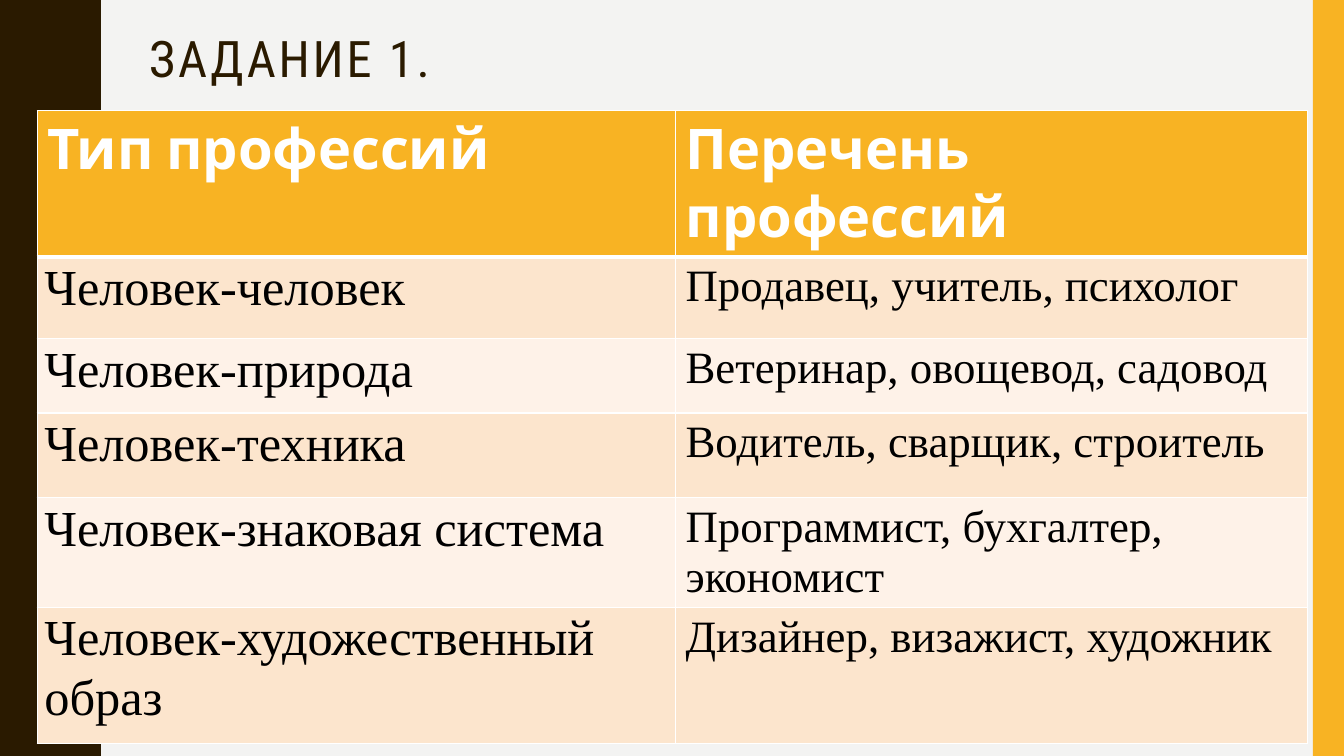
from lxml import etree
from pptx import Presentation
from pptx.dml.color import RGBColor
from pptx.enum.shapes import MSO_SHAPE as Shape
from pptx.enum.text import MSO_ANCHOR as Anchor, MSO_AUTO_SIZE as AutoSize, PP_ALIGN as Align
from pptx.oxml.ns import qn
from pptx.util import Inches, Pt

COLORS = {
    "background": "F3F3F2",
    "dark": "2A1A00",
    "accent": "F8B323",
    "band_dark": "FCE5CD",
    "band_light": "FEF2E8",
    "white": "FFFFFF",
    "black": "000000",
}
SLIDE_WIDTH, SLIDE_HEIGHT = 13.33, 7.5

# Half of one wave of the left edge, as (x, y); the other half mirrors it
HALF_WAVE = [
    (0.78, 0), (0.78, 0.07), (0.79, 0.14), (0.8, 0.2), (0.81, 0.25),
    (0.83, 0.29), (0.85, 0.33), (0.87, 0.38), (0.89, 0.42), (0.91, 0.46),
    (0.93, 0.5), (0.95, 0.55), (0.96, 0.61), (0.97, 0.68), (0.97, 0.75),
]
WAVE_HEIGHT, WAVE_COUNT = 1.5, 5

HEADERS = ["Тип профессий", "Перечень профессий"]
PROFESSIONS = [
    ("Человек-человек", "Продавец, учитель, психолог"),
    ("Человек-природа", "Ветеринар, овощевод, садовод"),
    ("Человек-техника", "Водитель, сварщик, строитель"),
    ("Человек-знаковая система", "Программист, бухгалтер, экономист"),
    ("Человек-художественный образ", "Дизайнер, визажист, художник"),
]
COLUMN_WIDTHS = [6.33, 6.27]
ROW_HEIGHTS = [0.82, 0.81, 0.74, 0.84, 0.76, 1.35]


def color(name):
    return RGBColor.from_string(COLORS[name])


class SlideBuilder:
    def __init__(self, presentation):
        self.slide = presentation.slides.add_slide(presentation.slide_layouts[5])
        self.shapes = self.slide.shapes
        self.paint(self.slide.background, "background")

    def paint(self, item, fill):
        item.fill.solid()
        item.fill.fore_color.rgb = color(fill)

    def finish(self, shape, fill):
        self.paint(shape, fill)
        shape.line.fill.background()
        shape.shadow.inherit = False

    def style(self, paragraph, font_name, size, font_color, bold=False):
        font = paragraph.font
        font.name, font.size, font.bold = font_name, Pt(size), bold
        font.color.rgb = color(font_color)

    def wavy_edge(self, fill):
        wave = HALF_WAVE + [(x, WAVE_HEIGHT - y) for x, y in HALF_WAVE[-2:0:-1]]
        points = [(x, y + WAVE_HEIGHT * index)
                  for index in range(WAVE_COUNT) for x, y in wave]
        points += [(HALF_WAVE[0][0], SLIDE_HEIGHT), (0, SLIDE_HEIGHT)]
        builder = self.shapes.build_freeform(0, 0, scale=Inches(1))
        builder.add_line_segments(points, close=True)
        self.finish(builder.convert_to_shape(), fill)

    def rectangle(self, left, top, width, height, fill):
        shape = self.shapes.add_shape(
            Shape.RECTANGLE, Inches(left), Inches(top), Inches(width), Inches(height))
        self.finish(shape, fill)

    def title(self, text, left, top, width, height):
        shape = self.shapes.title
        shape.left, shape.top = Inches(left), Inches(top)
        shape.width, shape.height = Inches(width), Inches(height)
        frame = shape.text_frame
        frame.text = text
        frame.word_wrap = True
        frame.auto_size = AutoSize.NONE
        frame.vertical_anchor = Anchor.TOP
        paragraph = frame.paragraphs[0]
        paragraph.alignment = Align.LEFT
        paragraph.line_spacing = 0.9
        self.style(paragraph, "Roboto Condensed", 36, "dark")
        # Letter spacing of 2 pt
        paragraph.runs[0].font._element.set("spc", "200")

    def borders(self, cell, widths):
        properties = cell._tc.get_or_add_tcPr()
        for position, (side, width) in enumerate(widths.items()):
            line = etree.Element(qn(f"a:{side}"), w=str(Pt(width)))
            fill = etree.SubElement(line, qn("a:solidFill"))
            etree.SubElement(fill, qn("a:srgbClr"), val=COLORS["white"])
            properties.insert(position, line)

    def cell(self, cell, text, row, column):
        cell.text = text
        paragraph = cell.text_frame.paragraphs[0]
        if row == 0:
            self.paint(cell, "accent")
            self.style(paragraph, "Cabin", 40, "white", bold=True)
        else:
            self.paint(cell, "band_dark" if row % 2 else "band_light")
            self.style(paragraph, "Times New Roman", 32 if column else 36, "black")
            if column == 0:
                cell.margin_left = cell.margin_right = Inches(0.07)
                cell.margin_top = cell.margin_bottom = 0
                paragraph.line_spacing = 1.07
        self.borders(cell, {"lnL": 1, "lnR": 1,
                            "lnT": 3 if row == 1 else 1,
                            "lnB": 3 if row == 0 else 1})

    def table(self, rows, left, top):
        table = self.shapes.add_table(
            len(rows), len(COLUMN_WIDTHS), Inches(left), Inches(top),
            Inches(sum(COLUMN_WIDTHS)), Inches(sum(ROW_HEIGHTS))).table
        for column, width in zip(table.columns, COLUMN_WIDTHS):
            column.width = Inches(width)
        for table_row, height in zip(table.rows, ROW_HEIGHTS):
            table_row.height = Inches(height)
        for row, texts in enumerate(rows):
            for column, text in enumerate(texts):
                self.cell(table.cell(row, column), text, row, column)


def main():
    presentation = Presentation()
    presentation.slide_width = Inches(SLIDE_WIDTH)
    presentation.slide_height = Inches(SLIDE_HEIGHT)
    builder = SlideBuilder(presentation)

    # Side decorations
    builder.wavy_edge("dark")
    builder.rectangle(13.02, 0, 0.31, SLIDE_HEIGHT, "accent")

    # Title and table of professions
    builder.title("ЗАДАНИЕ 1.", 1.38, 0.29, 11.13, 1.63)
    builder.table([HEADERS, *PROFESSIONS], 0.37, 1.1)

    presentation.save("out.pptx")


if __name__ == "__main__":
    main()
